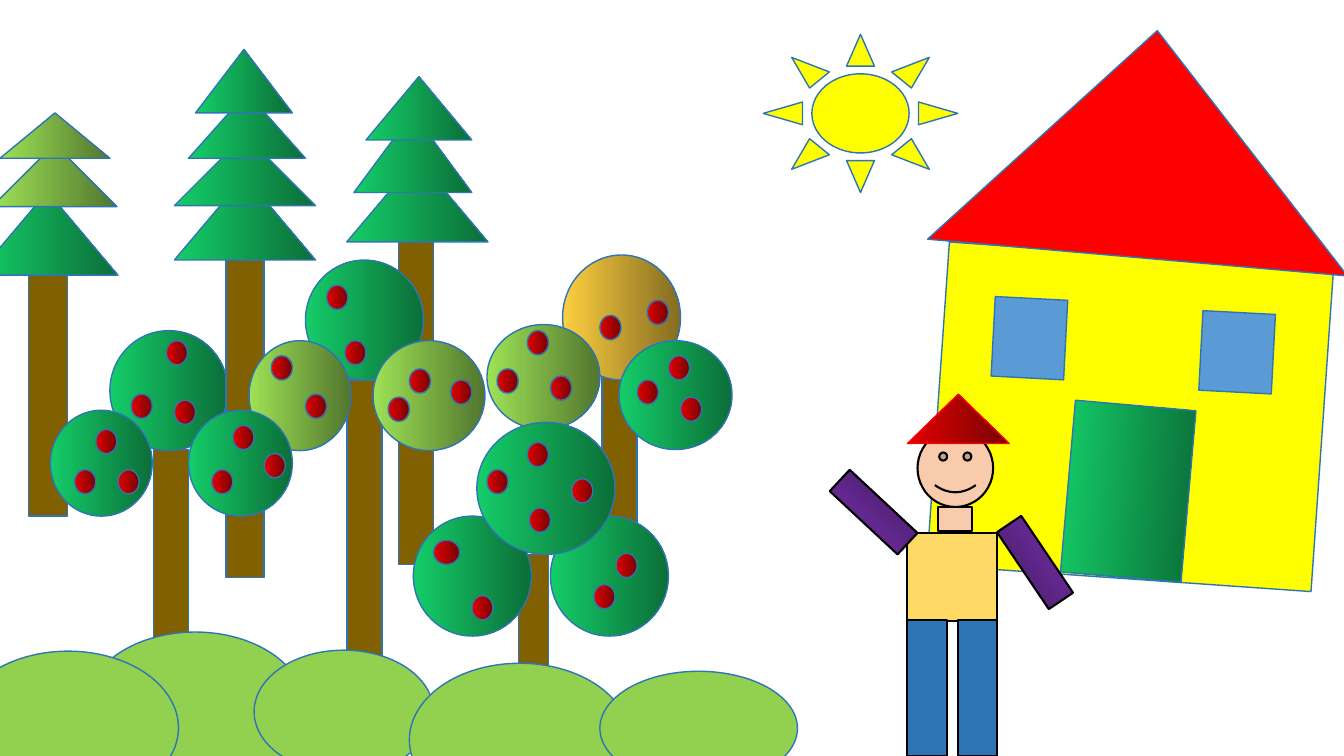
from pptx import Presentation
from pptx.dml.color import RGBColor
from pptx.enum.shapes import MSO_SHAPE as SHAPE
from pptx.util import Emu, Pt

PX = 9144  # EMU per px, 100 px to the inch
COLORS = {
    "bark": "806000", "outline": "2E75B6", "yellow": "FFFF00", "red": "FF0000",
    "glass": "5B9BD5", "grass": "92D050", "skin": "F8CBAD", "shirt": "FFD966",
    "trousers": "2E75B6", "black": "000000",
}
GRADIENTS = {
    "green": ("14CD68", "0B6E38"), "lime": ("9EE256", "52762D"),
    "amber": ("FECF40", "846C21"), "crimson": ("E30000", "760303"),
    "purple": ("7B32B2", "401A5D"),
}

prs = Presentation()
prs.slide_width, prs.slide_height = Emu(1333 * PX), Emu(750 * PX)
slide = prs.slides.add_slide(prs.slide_layouts[6])


def draw(kind, fill, left, top, width, height, rotation=0, line="outline", weight=1):
    """Add a shape filled with a plain colour or a left-to-right gradient."""
    shape = slide.shapes.add_shape(kind, *(Emu(n * PX) for n in (left, top, width, height)))
    shape.shadow.inherit = False
    shape.rotation = rotation
    if fill in GRADIENTS:
        shape.fill.gradient()
        shape.fill.gradient_angle = 0
        for stop, color in zip(shape.fill.gradient_stops, GRADIENTS[fill]):
            stop.color.rgb = RGBColor.from_string(color)
    else:
        shape.fill.solid()
        shape.fill.fore_color.rgb = RGBColor.from_string(COLORS[fill])
    shape.line.color.rgb = RGBColor.from_string(COLORS[line])
    shape.line.width = Pt(weight)


# Trunks at the back
for trunk in [(597, 362, 35, 239), (395, 236, 35, 324), (152, 446, 35, 239),
              (344, 377, 35, 324), (28, 273, 39, 239)]:
    draw(SHAPE.RECTANGLE, "bark", *trunk)

# House
draw(SHAPE.RECTANGLE, "yellow", 930, 253, 382, 321, 4)
draw(SHAPE.ISOSCELES_TRIANGLE, "red", 929, 30, 418, 226, 5)
for left, top in [(985, 296), (1191, 310)]:
    draw(SHAPE.RECTANGLE, "glass", left, top, 72, 79, 3)
draw(SHAPE.RECTANGLE, "green", 1059, 402, 120, 171, 5)

# Left fir
for fill, *tier in [("green", -23, 190, 140, 83), ("lime", -8, 143, 124, 62),
                    ("lime", 0, 112, 109, 45)]:
    draw(SHAPE.ISOSCELES_TRIANGLE, fill, *tier)

# Apple trees on the left and in the middle
for fill, *crown in [("green", 109, 328, 117, 119), ("green", 50, 407, 101, 105),
                     ("green", 303, 258, 117, 119), ("lime", 370, 338, 111, 109)]:
    draw(SHAPE.OVAL, fill, *crown)
draw(SHAPE.RECTANGLE, "bark", 514, 550, 30, 165)
for left in (546, 410):
    draw(SHAPE.OVAL, "green", left, 512, 117, 119)
draw(SHAPE.RECTANGLE, "bark", 224, 258, 38, 315)
draw(SHAPE.OVAL, "lime", 247, 338, 101, 109)
draw(SHAPE.OVAL, "green", 187, 407, 103, 105)

# Middle and right firs, each from the lowest tier up
for tier in [(173, 175, 140, 83), (173, 134, 140, 70), (187, 92, 116, 65), (194, 49, 96, 63),
             (344, 157, 140, 83), (351, 112, 117, 79), (363, 76, 105, 63)]:
    draw(SHAPE.ISOSCELES_TRIANGLE, "green", *tier)

# Hills
for hill in [(84, 627, 219, 152), (-42, 646, 219, 152), (252, 645, 178, 122),
             (406, 658, 219, 152), (595, 666, 196, 113)]:
    draw(SHAPE.OVAL, "grass", *hill)

# Crowns of the right-hand apple tree
for fill, *crown in [("amber", 558, 253, 117, 124), ("lime", 483, 322, 112, 104),
                     ("green", 614, 338, 112, 108)]:
    draw(SHAPE.OVAL, fill, *crown)

# Person
draw(SHAPE.SMILEY_FACE, "skin", 910, 426, 75, 77, line="black", weight=1.5)
for fill, *part in [("skin", 930, 503, 34, 24), ("shirt", 900, 529, 89, 87)]:
    draw(SHAPE.RECTANGLE, fill, *part, line="black", weight=1.5)
draw(SHAPE.ISOSCELES_TRIANGLE, "crimson", 900, 391, 101, 49, line="red")
for left in (900, 950):
    draw(SHAPE.RECTANGLE, "trousers", left, 615, 39, 135, line="black", weight=1.5)
for left, top, rotation in [(1012, 512, 146), (852, 462, 313)]:
    draw(SHAPE.RECTANGLE, "purple", left, top, 29, 92, rotation, "black", 1.5)

# Front crown, then the apples on every tree
draw(SHAPE.OVAL, "green", 473, 419, 137, 131)
apples = [
    (173, 397), (165, 338), (130, 391),
    (95, 426), (74, 466), (117, 466),
    (231, 422), (210, 466), (262, 450),
    (269, 353), (303, 391),
    (324, 283), (342, 338),
    (406, 366), (385, 394), (447, 377),
    (523, 328), (493, 366), (546, 373),
    (483, 466), (523, 439), (567, 475), (525, 504),
    (468, 591), (589, 580), (611, 549),
    (595, 313), (642, 298),
    (632, 377), (663, 353), (675, 394),
]
for left, top in apples:
    draw(SHAPE.OVAL, "crimson", left, top, 21, 24)
draw(SHAPE.OVAL, "crimson", 430, 536, 26, 24)

draw(SHAPE.SUN, "yellow", 757, 34, 193, 157)

prs.save("out.pptx")
